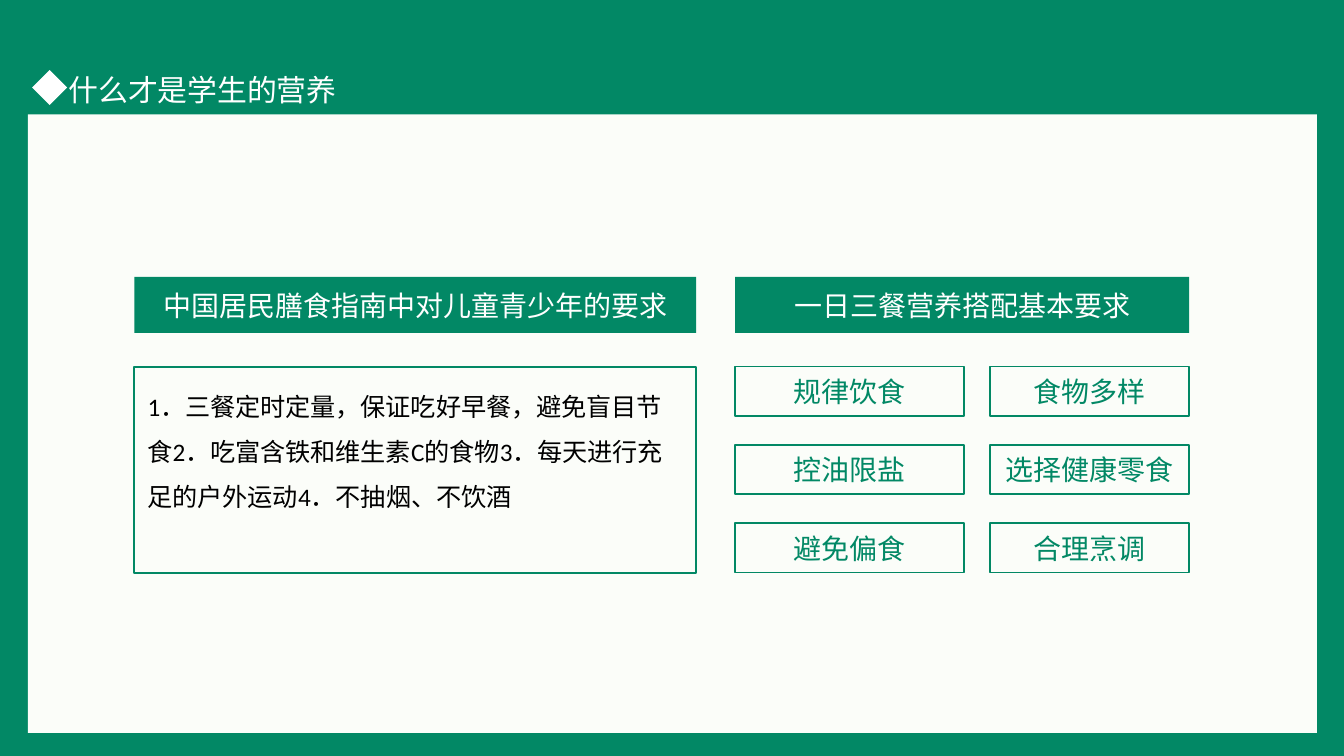
from lxml import etree
from pptx import Presentation
from pptx.dml.color import RGBColor
from pptx.enum import shapes as es, text as et
from pptx.oxml import ns
from pptx.util import Pt

GREEN = RGBColor(0x02, 0x88, 0x65)
CREAM = RGBColor(0xFB, 0xFD, 0xF9)
WHITE = RGBColor(0xFF, 0xFF, 0xFF)
BLACK = RGBColor(0, 0, 0)
SANS = "Noto Sans CJK SC"
LATIN = "Calibri"
KIND = es.MSO_SHAPE

GUIDE = ("1．三餐定时定量，保证吃好早餐，避免盲目节食2．吃富含铁和维生素C的食物"
         "3．每天进行充足的户外运动4．不抽烟、不饮酒")
HABITS = [("规律饮食", "食物多样"),
          ("控油限盐", "选择健康零食"),
          ("避免偏食", "合理烹调")]


def write(frame, words, size, color, face=SANS):
    frame.text = words
    para = frame.paragraphs[0]
    font = para.runs[0].font
    font.size, font.name, font.color.rgb = Pt(size), face, color
    # East Asian typeface for the Chinese characters
    east = etree.SubElement(para.runs[0]._r.get_or_add_rPr(), ns.qn("a:ea"))
    east.set("typeface", SANS)
    return para


def draw(slide, box, fill=None, line=None, kind=KIND.RECTANGLE):
    shape = slide.shapes.add_shape(kind, *map(Pt, box))
    shape.shadow.inherit = False
    if fill is None:
        shape.fill.background()
    else:
        shape.fill.solid()
        shape.fill.fore_color.rgb = fill
    if line is None:
        shape.line.fill.background()
    else:
        shape.line.color.rgb = line
        shape.line.width = Pt(1)
    return shape


def label(shape, words, color, side):
    frame = shape.text_frame
    frame.word_wrap = True
    frame.vertical_anchor = et.MSO_ANCHOR.MIDDLE
    frame.margin_left = frame.margin_right = Pt(side)
    frame.margin_top = frame.margin_bottom = Pt(4)
    write(frame, words, 15, color).alignment = et.PP_ALIGN.CENTER


def text_box(slide, box, wrap):
    frame = slide.shapes.add_textbox(*map(Pt, box)).text_frame
    frame.word_wrap = wrap
    frame.auto_size = et.MSO_AUTO_SIZE.SHAPE_TO_FIT_TEXT
    return frame


def add_title(slide, x, y, w, h):
    # Heading with its diamond marker
    frame = text_box(slide, (x + 12.5, y, w - 12.5, h), False)
    write(frame, "什么才是学生的营养", 16, WHITE, LATIN)
    draw(slide, (x, y + 2.8, 18.8, 18.8), WHITE, kind=KIND.DIAMOND)


def add_guide(slide, x, y, w, h):
    # Banner, then the outlined advice
    label(draw(slide, (x, y, w, 30), GREEN),
          "中国居民膳食指南中对儿童青少年的要求", WHITE, 7.2)
    draw(slide, (x, y + 48, w, h - 48), line=GREEN)
    frame = text_box(slide, (x, y + 49.5, w + 2, 78.5), True)
    write(frame, GUIDE, 13.5, BLACK, LATIN).line_spacing = 1.5


def add_habits(slide, x, y, w, h):
    # Banner, then a grid of two columns
    label(draw(slide, (x, y, w, 30), GREEN),
          "一日三餐营养搭配基本要求", WHITE, 7.2)
    cell, gap = 26.6, 14
    wide = 122.6
    cols = [(x, wide), (x + wide + gap, w - wide - gap)]
    step = (h - 48 - cell) / (len(HABITS) - 1)
    for row, names in enumerate(HABITS):
        for (left, width), name in zip(cols, names):
            box = (left, y + 48 + row * step, width, cell)
            label(draw(slide, box, line=GREEN), name, GREEN, 2)


def main():
    deck = Presentation()
    deck.slide_width, deck.slide_height = Pt(720), Pt(405)
    slide = deck.slides.add_slide(deck.slide_layouts[6])
    slide.background.fill.solid()
    slide.background.fill.fore_color.rgb = GREEN

    add_title(slide, 17.2, 34.7, 172, 26.6)
    draw(slide, (15, 61.3, 690.5, 331.4), CREAM)
    add_guide(slide, 72, 148.4, 301, 158.4)
    add_habits(slide, 393.8, 148.4, 243.3, 158.4)
    deck.save("out.pptx")


if __name__ == "__main__":
    main()
